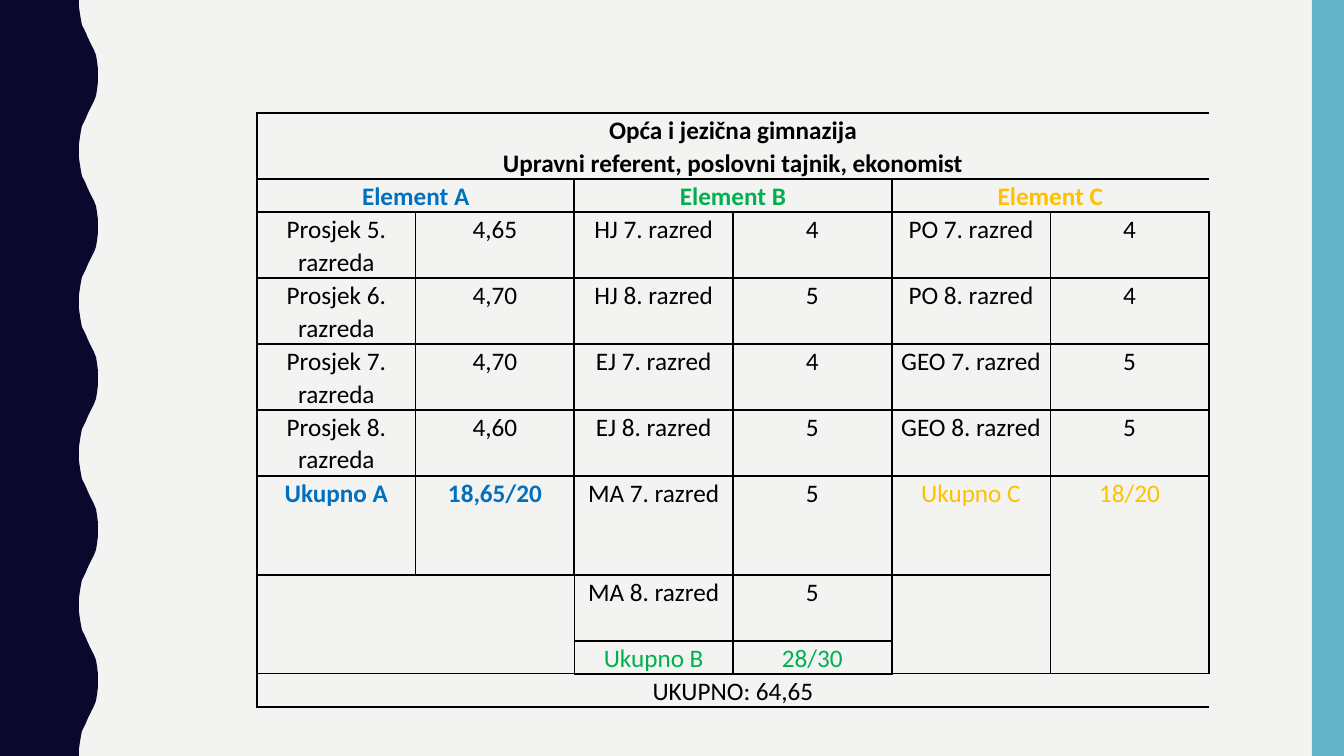
from lxml.etree import SubElement
from pptx import Presentation
from pptx.dml.color import RGBColor
from pptx.enum.shapes import MSO_SHAPE
from pptx.enum.text import PP_ALIGN
from pptx.oxml.ns import qn
from pptx.util import Pt

NAVY = RGBColor(0x0B, 0x08, 0x2E)
TEAL = RGBColor(0x62, 0xB4, 0xC6)
PAPER = RGBColor(0xF3, 0xF3, 0xF2)
BLACK = RGBColor(0, 0, 0)
BLUE = RGBColor(0x00, 0x70, 0xC0)
GREEN = RGBColor(0x00, 0xB0, 0x50)
GOLD = RGBColor(0xFF, 0xC0, 0x00)

WIDTH, HEIGHT = 1344, 756
SCALE = 12192000 / WIDTH
WAVES = 5
HALF_WAVE = [(79, 0), (79, 7), (80, 14), (81, 20), (82, 25), (84, 29), (86, 33), (88, 38),
             (90, 42), (92, 46), (94, 50), (96, 55), (97, 61), (98, 69), (98, 76)]

LINE = 33
ROW_LINES = [2, 1, 2, 2, 2, 2, 3, 2, 1, 1]
ROWS = [
    ["Opća i jezična gimnazija\nUpravni referent, poslovni tajnik, ekonomist", "", "", "", "", ""],
    ["Element A", "", "Element B", "", "Element C", ""],
    ["Prosjek 5. razreda", "4,65", "HJ 7. razred", "4", "PO 7. razred", "4"],
    ["Prosjek 6. razreda", "4,70", "HJ 8. razred", "5", "PO 8. razred", "4"],
    ["Prosjek 7. razreda", "4,70", "EJ 7. razred", "4", "GEO 7. razred", "5"],
    ["Prosjek 8. razreda", "4,60", "EJ 8. razred", "5", "GEO 8. razred", "5"],
    ["Ukupno A", "18,65/20", "MA 7. razred", "5", "Ukupno C", "18/20"],
    ["", "", "MA 8. razred", "5", "", ""],
    ["", "", "Ukupno B", "28/30", "", ""],
    ["UKUPNO: 64,65", "", "", "", "", ""],
]
SPANS = {(0, 0): (1, 6), (1, 0): (1, 2), (1, 2): (1, 2), (1, 4): (1, 2),
         (6, 5): (3, 1), (7, 0): (2, 2), (7, 4): (2, 1), (9, 0): (1, 6)}
COLORS = {(1, 0): BLUE, (1, 2): GREEN, (1, 4): GOLD, (6, 0): BLUE, (6, 1): BLUE,
          (6, 4): GOLD, (6, 5): GOLD, (8, 2): GREEN, (8, 3): GREEN}
BOLD = {(0, 0), (1, 0), (1, 2), (1, 4), (6, 0), (6, 1)}


def emu(px):
    return round(px * SCALE)


def column_line(row, x):
    return 1.5 if x % 2 == 0 and not (x == 2 and row in (7, 8)) else 1


def row_line(y, col):
    return 1.5 if y in (0, 10) or (y == 9 and col in (2, 3)) else 1


class SlideBuilder:
    def __init__(self, prs, font, size):
        self.font, self.size = font, size
        self.s = prs.slides.add_slide(prs.slide_layouts[6])

    def background(self, color):
        fill = self.s.background.fill
        fill.solid()
        fill.fore_color.rgb = color

    def paint(self, sp, color):
        sp.shadow.inherit = False
        sp.fill.solid()
        sp.fill.fore_color.rgb = color
        sp.line.fill.background()

    def rect(self, x, y, w, h, color):
        sp = self.s.shapes.add_shape(MSO_SHAPE.RECTANGLE, emu(x), emu(y), emu(w), emu(h))
        self.paint(sp, color)

    def outline(self, points, color):
        builder = self.s.shapes.build_freeform(*points[0], scale=SCALE)
        builder.add_line_segments(points[1:], close=True)
        self.paint(builder.convert_to_shape(), color)

    def table(self, x, y, w, rows, heights, spans):
        count = len(rows[0])
        frame = self.s.shapes.add_table(len(rows), count, emu(x), emu(y), emu(w), emu(sum(heights)))
        tbl = frame.table
        tbl.first_row = tbl.horz_banding = False
        for column in tbl.columns:
            column.width = emu(w) // count
        for row, height in zip(tbl.rows, heights):
            row.height = emu(height)
        covered = set()
        for r, texts in enumerate(rows):
            for c, text in enumerate(texts):
                if (r, c) in covered:
                    continue
                down, across = spans.get((r, c), (1, 1))
                block = {(i, j) for i in range(r, r + down) for j in range(c, c + across)}
                covered |= block
                for i, j in block:
                    self.cell(tbl.cell(i, j), i, j, block)
                if len(block) > 1:
                    tbl.cell(r, c).merge(tbl.cell(r + down - 1, c + across - 1))
                if text:
                    self.text(tbl.cell(r, c), text, COLORS.get((r, c), BLACK), (r, c) in BOLD)

    def cell(self, cell, row, col, block):
        cell.margin_left = cell.margin_right = emu(7)
        cell.margin_top = cell.margin_bottom = 0
        cell.fill.background()
        edges = [("L", (row, col - 1), column_line(row, col)),
                 ("R", (row, col + 1), column_line(row, col + 1)),
                 ("T", (row - 1, col), row_line(row, col)),
                 ("B", (row + 1, col), row_line(row + 1, col))]
        tcPr = cell._tc.get_or_add_tcPr()
        for index, (side, neighbour, width) in enumerate(edges):
            ln = SubElement(tcPr, qn(f"a:ln{side}"), w=str(Pt(width)))
            tcPr.insert(index, ln)
            if neighbour in block:
                SubElement(ln, qn("a:noFill"))
            else:
                fill = SubElement(ln, qn("a:solidFill"))
                SubElement(fill, qn("a:srgbClr"), val=str(BLACK))

    def text(self, cell, text, color, bold):
        p = cell.text_frame.paragraphs[0]
        p.alignment = PP_ALIGN.CENTER
        p.line_spacing = 1.07
        for index, line in enumerate(text.split("\n")):
            if index:
                p.add_line_break()
            r = p.add_run()
            r.text = line
            r.font.name = self.font
            r.font.size = Pt(self.size)
            r.font.bold = bold
            r.font.color.rgb = color


def wave_points():
    period = HEIGHT / WAVES
    wave = HALF_WAVE + [(x, period - y) for x, y in reversed(HALF_WAVE[:-1])]
    edge = [(x, round(n * period + y)) for n in range(WAVES) for x, y in wave]
    return [(0, 0)] + edge + [(0, HEIGHT)]


def main():
    prs = Presentation()
    prs.slide_width, prs.slide_height = emu(WIDTH), emu(HEIGHT)
    slide = SlideBuilder(prs, "Calibri", 18)
    slide.background(PAPER)
    slide.outline(wave_points(), NAVY)
    slide.rect(1312, 0, 32, HEIGHT, TEAL)
    slide.table(257, 113, 952, ROWS, [n * LINE for n in ROW_LINES], SPANS)
    prs.save("out.pptx")


if __name__ == "__main__":
    main()
